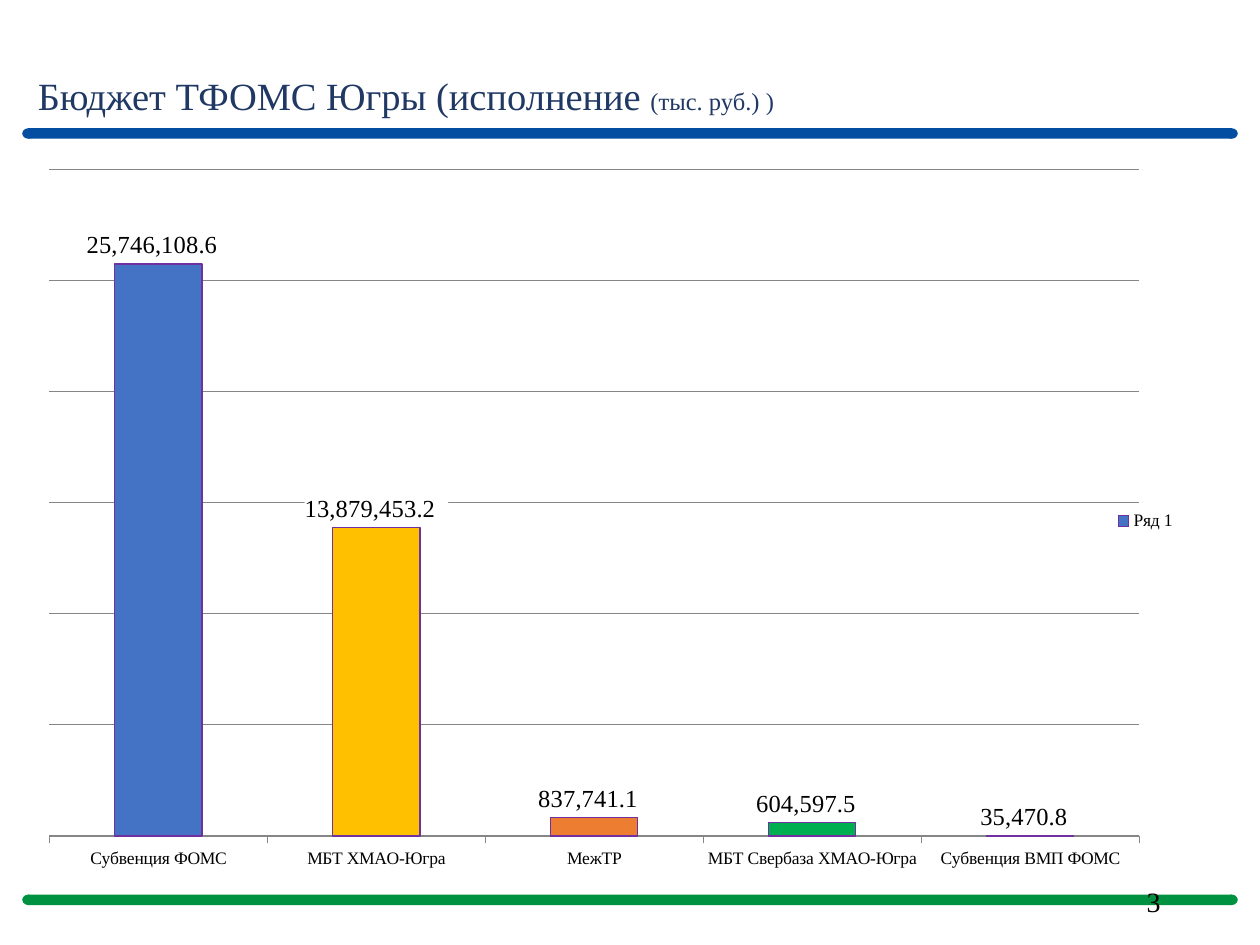
import pptx
import pptx.chart.data
import pptx.dml.color
import pptx.enum.chart
import pptx.enum.shapes
import pptx.enum.text
import pptx.oxml
import pptx.oxml.ns
import pptx.util

Pt = pptx.util.Pt
RGB = pptx.dml.color.RGBColor.from_string
SHAPE = pptx.enum.shapes.MSO_SHAPE
THEME = {
    "font": "Times New Roman",
    "title": "203864", "text": "000000", "grid": "868686",
    "top_band": "034EA1", "bottom_band": "009240",
    "bars": ["4472C4", "FFC000", "ED7D31", "00B050", "7030A0"],
    "outline": "7030A0",
    "title_size": 22, "unit_size": 14, "label_size": 14,
    "axis_size": 10, "number_size": 16,
}
VALUE_FORMAT = "#,##0.0_₽"


def style(font, size, color):
    font.name = THEME["font"]
    font.size = Pt(size)
    font.color.rgb = RGB(color)


def layout_xml(x, y, w, h, inner=False):
    target = '<c:layoutTarget val="inner"/>' if inner else ""
    return pptx.oxml.parse_xml(
        f'<c:layout {pptx.oxml.ns.nsdecls("c")}><c:manualLayout>{target}'
        '<c:xMode val="edge"/><c:yMode val="edge"/>'
        f'<c:x val="{x}"/><c:y val="{y}"/><c:w val="{w}"/><c:h val="{h}"/>'
        '</c:manualLayout></c:layout>')


deck = pptx.Presentation()
deck.slide_width, deck.slide_height = Pt(720), Pt(540)
slide = deck.slides.add_slide(deck.slide_layouts[5])

# Rounded bands under the title and at the foot
for top, color in ((73.3, THEME["top_band"]), (511.2, THEME["bottom_band"])):
    band = slide.shapes.add_group_shape()
    for kind, left, width in ((SHAPE.RECTANGLE, 16, 688),
                              (SHAPE.OVAL, 12.7, 7), (SHAPE.OVAL, 700.3, 7)):
        piece = band.shapes.add_shape(kind, Pt(left), Pt(top), Pt(width), Pt(6))
        piece.shadow.inherit = False
        piece.fill.solid()
        piece.fill.fore_color.rgb = RGB(color)
        piece.line.fill.background()

# Title
title = slide.shapes.title
title.left, title.top, title.width, title.height = Pt(14.4), Pt(9.4), Pt(620.6), Pt(62)
title.text_frame.word_wrap = True
title.text_frame.vertical_anchor = pptx.enum.text.MSO_ANCHOR.BOTTOM
heading = title.text_frame.paragraphs[0]
heading.alignment = pptx.enum.text.PP_ALIGN.LEFT
heading.line_spacing = 0.9
for words, size in (("Бюджет ТФОМС Югры (исполнение ", THEME["title_size"]),
                    ("(тыс. руб.) )", THEME["unit_size"])):
    run = heading.add_run()
    run.text = words
    style(run.font, size, THEME["title"])

# Budget chart
budget = pptx.chart.data.CategoryChartData(number_format=VALUE_FORMAT)
budget.categories = ["Субвенция ФОМС", "МБТ ХМАО-Югра", "МежТР",
                     "МБТ Свербаза ХМАО-Югра", "Субвенция ВМП ФОМС"]
budget.add_series("Ряд 1", [25746108.6, 13879453.2, 837741.1, 604597.5, 35470.8])
chart = slide.shapes.add_chart(
    pptx.enum.chart.XL_CHART_TYPE.COLUMN_CLUSTERED,
    Pt(14.4), Pt(88.6), Pt(692), Pt(414), budget).chart
chart.has_title = False
style(chart.font, THEME["axis_size"], THEME["text"])
plot_area = chart._chartSpace.chart.plotArea
for old in plot_area.findall(pptx.oxml.ns.qn("c:layout")):
    plot_area.remove(old)
plot_area.insert(0, layout_xml(0.02, 0.02, 0.9, 0.92, inner=True))

# Axes
amounts = chart.value_axis
amounts.visible = False
amounts.minimum_scale, amounts.maximum_scale, amounts.major_unit = 0, 30000000, 5000000
amounts.has_major_gridlines = True
sources = chart.category_axis
sources.major_tick_mark = pptx.enum.chart.XL_TICK_MARK.OUTSIDE
style(sources.tick_labels.font, THEME["axis_size"], THEME["text"])
for line in (amounts.major_gridlines.format.line, sources.format.line):
    line.color.rgb = RGB(THEME["grid"])
    line.width = Pt(0.75)

# Bars, one colour per source
plot = chart.plots[0]
plot.gap_width = 150
plot.vary_by_categories = False
series = plot.series[0]
bars = [series] + [series.points[i] for i in range(1, len(THEME["bars"]))]
for bar, color in zip(bars, THEME["bars"]):
    bar.format.fill.solid()
    bar.format.fill.fore_color.rgb = RGB(color)
    bar.format.line.color.rgb = RGB(THEME["outline"])
    bar.format.line.width = Pt(0.75)

# Value labels on white, so gridlines do not cross them
labels = series.data_labels
labels.show_value = True
labels.position = pptx.enum.chart.XL_LABEL_POSITION.OUTSIDE_END
labels.number_format = VALUE_FORMAT
labels.number_format_is_linked = False
style(labels.font, THEME["label_size"], THEME["text"])
labels._element.find(pptx.oxml.ns.qn("c:numFmt")).addnext(pptx.oxml.parse_xml(
    f'<c:spPr {pptx.oxml.ns.nsdecls("c", "a")}><a:solidFill>'
    '<a:srgbClr val="FFFFFF"/></a:solidFill></c:spPr>'))

# Legend
chart.has_legend = True
legend = chart.legend
legend.position = pptx.enum.chart.XL_LEGEND_POSITION.RIGHT
legend.include_in_layout = False
style(legend.font, THEME["axis_size"], THEME["text"])
for old in legend._element.findall(pptx.oxml.ns.qn("c:layout")):
    legend._element.remove(old)
legend._element.find(pptx.oxml.ns.qn("c:legendPos")).addnext(
    layout_xml(0.89, 0.48, 0.07, 0.05))

# Page number
number_box = slide.shapes.add_textbox(Pt(508.3), Pt(500.4), Pt(162), Pt(28.8))
number_box.text_frame.word_wrap = True
number_box.text_frame.vertical_anchor = pptx.enum.text.MSO_ANCHOR.MIDDLE
number = number_box.text_frame.paragraphs[0]
number.text = "3"
number.alignment = pptx.enum.text.PP_ALIGN.RIGHT
style(number.font, THEME["number_size"], THEME["text"])

deck.save("out.pptx")
